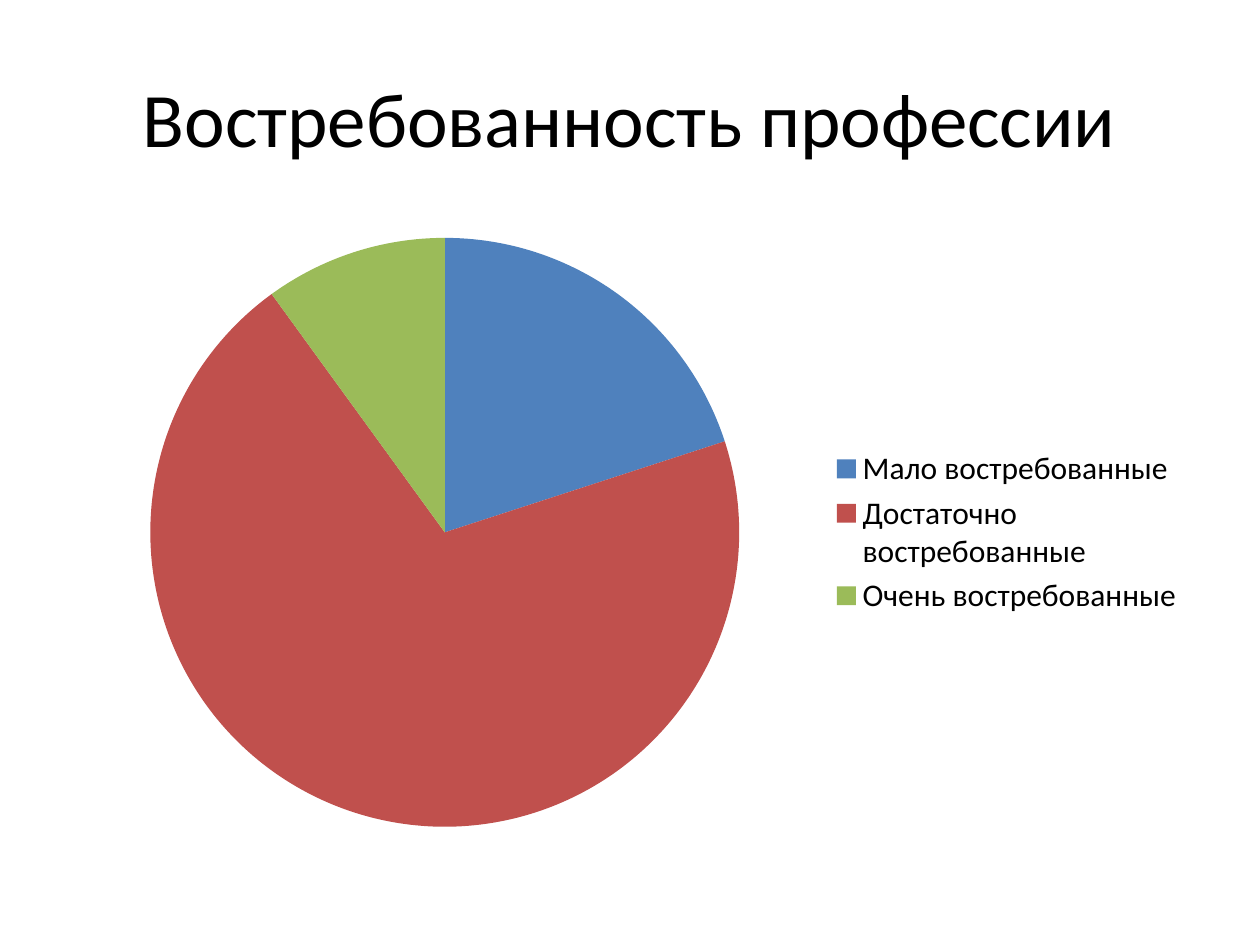
from pptx import Presentation
from pptx import util as u
from pptx.chart import data as cd
from pptx.dml import color
from pptx.enum import chart as ce, text

SHARES = [
    ("Мало востребованные", 20, "4F81BD"),
    ("Достаточно востребованные", 70, "C0504D"),
    ("Очень востребованные", 10, "9BBB59"),
]


def box(*sides):
    return [u.Inches(side) for side in sides]


def rgb(code):
    return color.RGBColor.from_string(code)


def style(font, size):
    font.name = "Calibri"
    font.size = u.Pt(size)
    font.color.rgb = rgb("000000")


def add_title(slide, words):
    frame = slide.shapes.add_textbox(*box(0.5, 0.3, 9, 1.25)).text_frame
    frame.word_wrap = True
    frame.vertical_anchor = text.MSO_ANCHOR.MIDDLE
    frame.text = words
    line = frame.paragraphs[0]
    line.alignment = text.PP_ALIGN.CENTER
    style(line.runs[0].font, 44)


def add_pie(slide, shares):
    names, values, fills = zip(*shares)
    data = cd.CategoryChartData()
    data.categories = names
    data.add_series("Series 1", values)
    frame = slide.shapes.add_chart(
        ce.XL_CHART_TYPE.PIE, *box(0.5, 1.75, 9, 4.95), data
    )
    chart = frame.chart
    style(chart.font, 18)
    chart.has_title = False
    chart.has_legend = True
    chart.legend.position = ce.XL_LEGEND_POSITION.RIGHT
    chart.legend.include_in_layout = False
    plot = chart.plots[0]
    plot.vary_by_categories = True
    for spot, code in enumerate(fills):
        fill = plot.series[0].points[spot].format.fill
        fill.solid()
        fill.fore_color.rgb = rgb(code)


def main():
    deck = Presentation()
    deck.slide_width, deck.slide_height = box(10, 7.5)
    slide = deck.slides.add_slide(deck.slide_layouts[6])
    add_title(slide, "Востребованность профессии")
    add_pie(slide, SHARES)
    deck.save("out.pptx")


if __name__ == "__main__":
    main()
